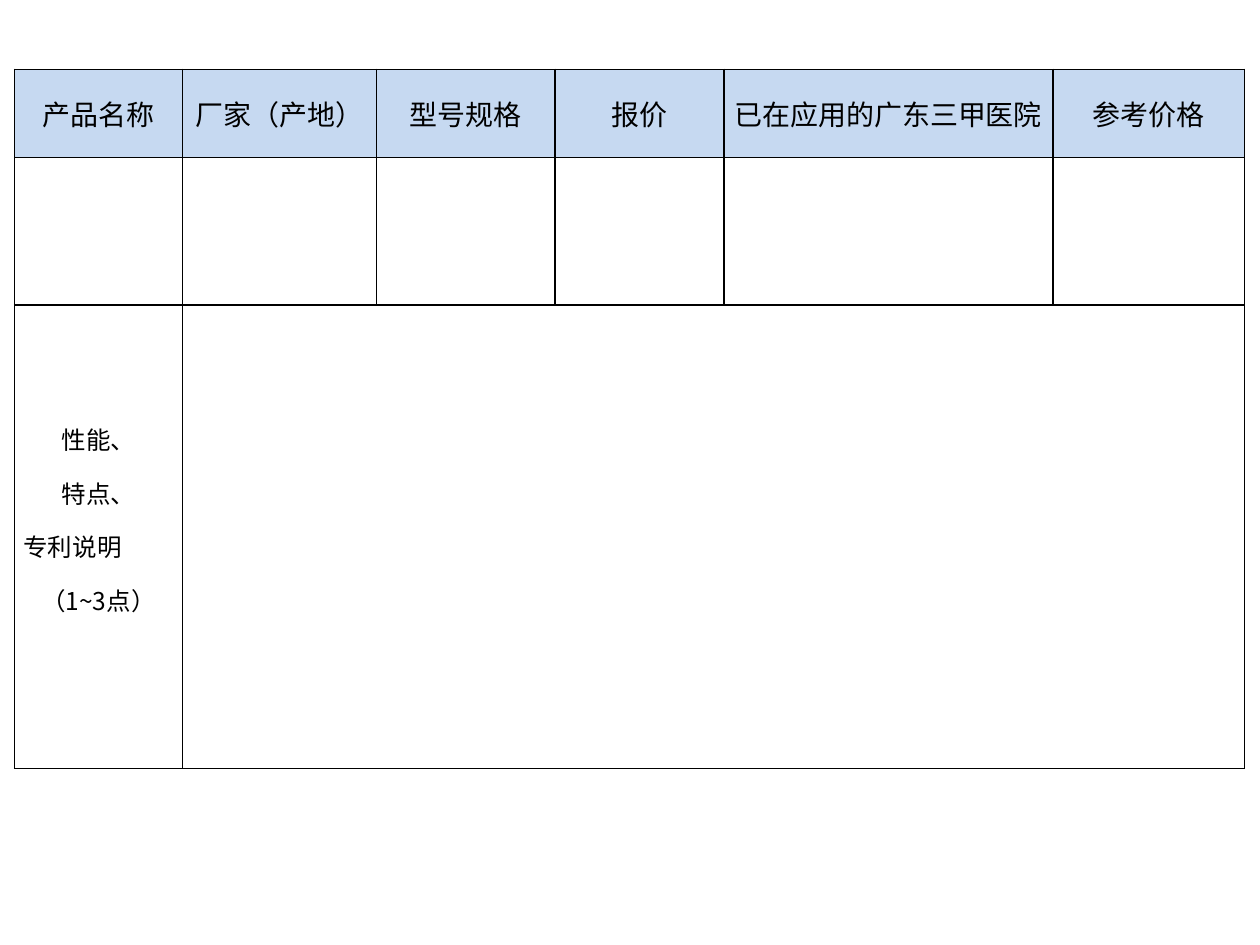
from lxml.etree import SubElement
from pptx import Presentation
from pptx.dml.color import RGBColor
from pptx.enum.text import MSO_ANCHOR, PP_ALIGN
from pptx.oxml.ns import qn
from pptx.util import Pt

BLACK = RGBColor(0, 0, 0)
BLUE = RGBColor(0xC6, 0xD9, 0xF1)
FACE = "Noto Sans CJK SC"
COLS = [95.8, 110.9, 102.2, 96.5, 187.9, 109.4]
ROWS = [50.4, 84.2, 265]
HEADS = ["产品名称", "厂家（产地）", "型号规格", "报价", "已在应用的广东三甲医院", "参考价格"]
MID, LEFT = PP_ALIGN.CENTER, PP_ALIGN.LEFT
NOTES = [("性能、", MID), ("特点、", MID), ("专利说明", LEFT), ("（1~3点）", MID)]
CELL = {
    "vertical_anchor": MSO_ANCHOR.MIDDLE,
    "margin_left": Pt(5),
    "margin_right": Pt(5),
    "margin_top": 0,
    "margin_bottom": 0,
}


def apply(item, style):
    for name, value in style.items():
        setattr(item, name, value)


def add_edges(cell):
    props = cell._tc.get_or_add_tcPr()
    for side in ("lnL", "lnR", "lnT", "lnB"):
        line = SubElement(props, qn(f"a:{side}"), w=str(Pt(1)))
        fill = SubElement(line, qn("a:solidFill"))
        SubElement(fill, qn("a:srgbClr"), val=str(BLACK))


def paint(cell, color=None):
    add_edges(cell)
    if color is None:
        cell.fill.background()
    else:
        cell.fill.solid()
        cell.fill.fore_color.rgb = color
    apply(cell, CELL)


def write(cell, lines, size, space=1):
    frame = cell.text_frame
    for i, (text, align) in enumerate(lines):
        para = frame.add_paragraph() if i else frame.paragraphs[0]
        apply(para, {"alignment": align, "line_spacing": space})
        run = para.add_run()
        run.text = text
        apply(run.font, {"size": Pt(size), "name": FACE, "bold": False})
        run.font.color.rgb = BLACK
        SubElement(run._r.get_or_add_rPr(), qn("a:ea"), typeface=FACE)


def add_grid(slide):
    frame = slide.shapes.add_table(
        len(ROWS), len(COLS), Pt(8.4), Pt(39.6), Pt(sum(COLS)), Pt(sum(ROWS))
    )
    table = frame.table
    apply(table, {"first_row": False, "horz_banding": False})
    for col, width in zip(table.columns, COLS):
        col.width = Pt(width)
    for r, (row, height) in enumerate(zip(table.rows, ROWS)):
        row.height = Pt(height)
        for cell in row.cells:
            paint(cell, None if r else BLUE)
    return table


def main():
    deck = Presentation()
    apply(deck, {"slide_width": Pt(720), "slide_height": Pt(540)})
    slide = deck.slides.add_slide(deck.slide_layouts[6])
    table = add_grid(slide)
    for c, head in enumerate(HEADS):
        write(table.cell(0, c), [(head, MID)], 16)
    label = table.cell(2, 0)
    write(label, NOTES, 14, 1.5)
    label.margin_bottom = Pt(30)
    table.cell(2, 1).merge(table.cell(2, len(COLS) - 1))
    deck.save("out.pptx")


if __name__ == "__main__":
    main()
